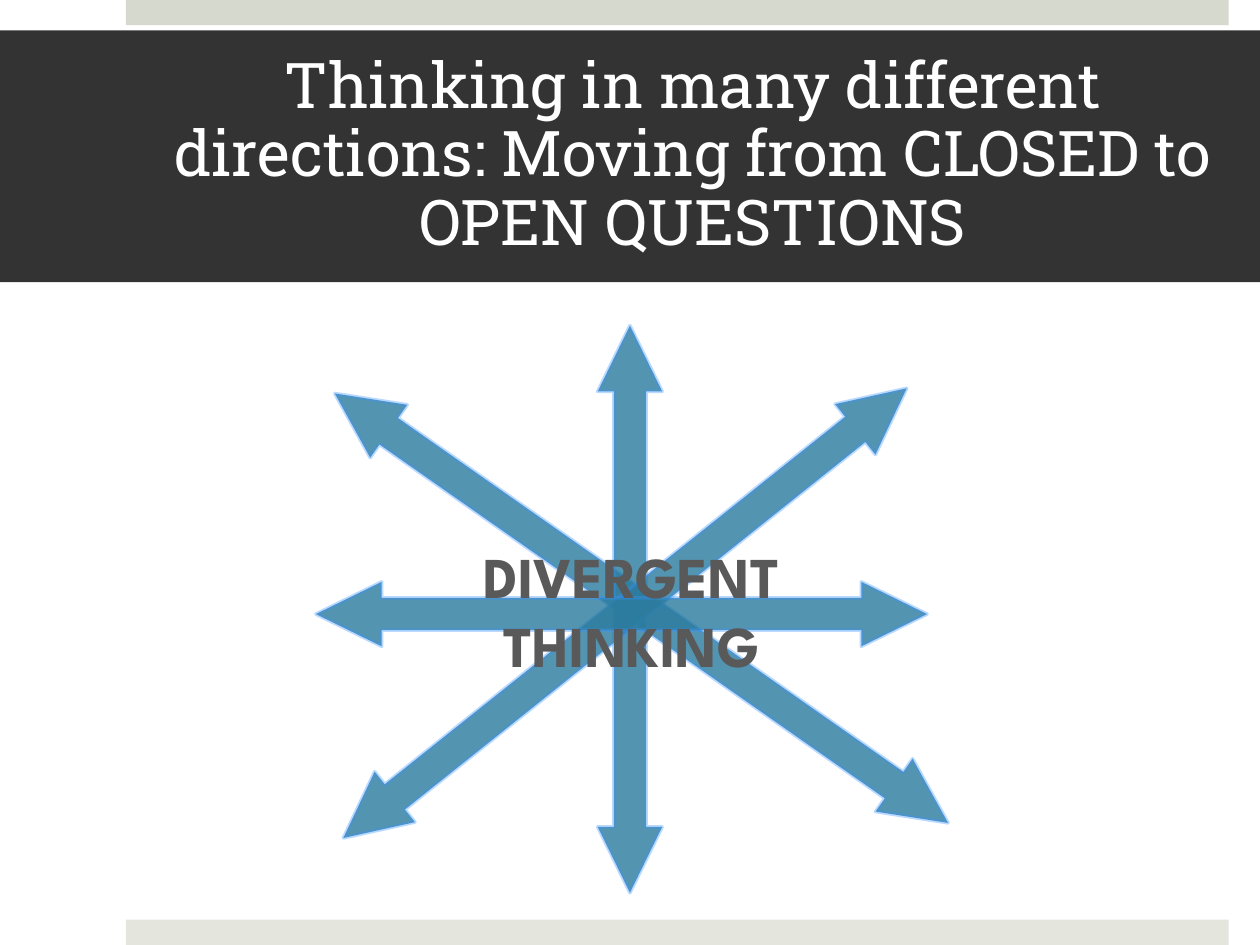
from dataclasses import dataclass

from lxml import etree
from pptx import Presentation
from pptx.dml.color import RGBColor
from pptx.enum import shapes, text
from pptx.oxml import ns
from pptx.util import Cm, Pt


@dataclass(frozen=True)
class Theme:
    band: str = "333333"
    band_text: str = "FFFFFF"
    top_bar: str = "D6D9CD"
    bottom_bar: str = "E4E6DE"
    arrow: str = "2C7C9F"
    arrow_edge: str = "3A93FF"
    label: str = "595959"
    title_font: str = "Roboto Slab"
    label_font: str = "League Spartan"
    title_size: int = 36
    label_size: int = 33
    arrow_opacity: int = 81
    edge_opacity: int = 34


class SlideBuilder:
    """Draws themed elements on one slide, with lengths in centimetres."""

    def __init__(self, slide, theme):
        self.slide = slide
        self.theme = theme

    def paint(self, fill, color, opacity=100):
        fill.solid()
        fill.fore_color.rgb = RGBColor.from_string(color)
        if opacity < 100:
            srgb = fill._xPr.find(".//" + ns.qn("a:srgbClr"))
            etree.SubElement(srgb, ns.qn("a:alpha"), val=str(opacity * 1000))

    def add_words(self, paragraph, words, font_name, size, color, bold=False):
        paragraph.alignment = text.PP_ALIGN.CENTER
        for index, line in enumerate(words.split("\n")):
            if index:
                paragraph.add_line_break()
            run = paragraph.add_run()
            run.text = line
            run.font.name = font_name
            run.font.size = Pt(size)
            run.font.bold = bold
            run.font.color.rgb = RGBColor.from_string(color)

    def bar(self, top, color):
        bar = self.slide.shapes.add_shape(
            shapes.MSO_SHAPE.RECTANGLE, Cm(2.54), Cm(top), Cm(22.23), Cm(0.51))
        bar.shadow.inherit = False
        self.paint(bar.fill, color)
        bar.line.fill.background()

    def title(self, words):
        theme = self.theme
        title = self.slide.shapes.title
        title.left, title.top, title.width, title.height = Cm(0), Cm(0.61), Cm(25.4), Cm(5.08)
        self.paint(title.fill, theme.band)
        frame = title.text_frame
        frame.word_wrap = True
        frame.auto_size = text.MSO_AUTO_SIZE.NONE
        frame.vertical_anchor = text.MSO_ANCHOR.MIDDLE
        frame.margin_left, frame.margin_right = Cm(3.3), Cm(0.76)
        frame.margin_top = frame.margin_bottom = Cm(0.13)
        heading = frame.paragraphs[0]
        heading.line_spacing = 0.91
        self.add_words(heading, words, theme.title_font, theme.title_size, theme.band_text)

    def arrow(self, group, center_x, center_y, length, angle, thickness=1.3):
        theme = self.theme
        arrow = group.shapes.add_shape(
            shapes.MSO_SHAPE.LEFT_RIGHT_ARROW,
            Cm(center_x - length / 2), Cm(center_y - thickness / 2), Cm(length), Cm(thickness))
        arrow.rotation = angle
        arrow.adjustments[0], arrow.adjustments[1] = 0.5, 1.02
        arrow.shadow.inherit = False
        self.paint(arrow.fill, theme.arrow, theme.arrow_opacity)
        arrow.line.width = Pt(2)
        self.paint(arrow.line.fill, theme.arrow_edge, theme.edge_opacity)

    def label(self, group, words):
        theme = self.theme
        label = group.shapes.add_textbox(Cm(6.65), Cm(10.01), Cm(12.17), Cm(3.81))
        frame = label.text_frame
        frame.word_wrap = True
        frame.vertical_anchor = text.MSO_ANCHOR.BOTTOM
        self.add_words(frame.paragraphs[0], words, theme.label_font,
                       theme.label_size, theme.label, bold=True)

    def star(self, words, rays):
        group = self.slide.shapes.add_group_shape()
        for ray in rays:
            self.arrow(group, *ray)
        self.label(group, words)


def main():
    deck = Presentation()
    deck.slide_width, deck.slide_height = Cm(25.4), Cm(19.05)
    theme = Theme()
    builder = SlideBuilder(deck.slides.add_slide(deck.slide_layouts[5]), theme)
    builder.bar(0, theme.top_bar)
    builder.bar(18.54, theme.bottom_bar)
    builder.title("Thinking in many different directions: "
                  "Moving from CLOSED to OPEN QUESTIONS")
    builder.star("DIVERGENT\nTHINKING", [
        (12.93, 12.26, 15.09, 215),
        (12.7, 12.28, 11.43, 270),
        (12.6, 12.36, 14.53, 141.4),
        (12.53, 12.38, 12.32, 0),
    ])
    deck.save("out.pptx")


if __name__ == "__main__":
    main()
